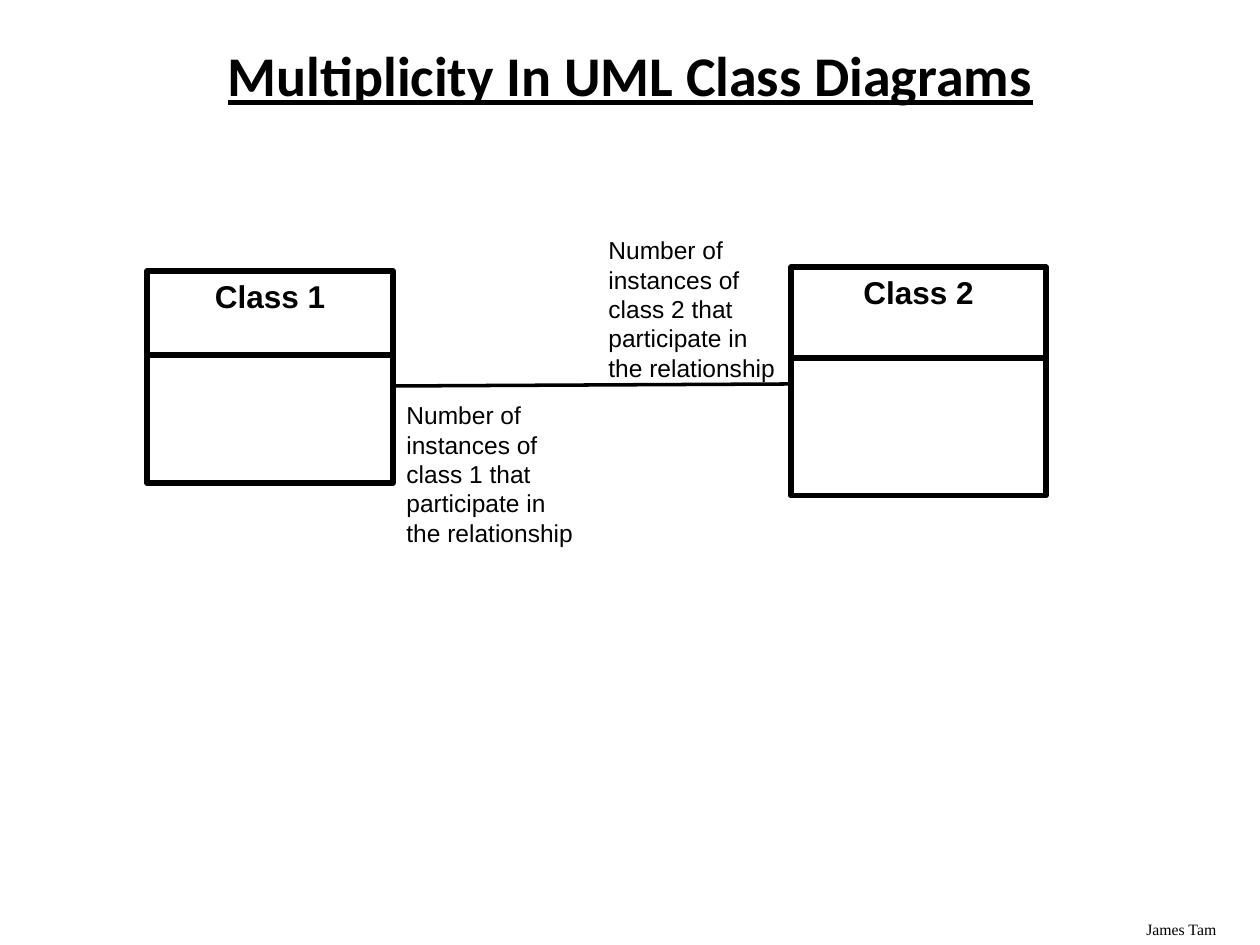
from dataclasses import dataclass

from lxml import etree
from pptx import Presentation, util as u
from pptx.dml.color import RGBColor
from pptx.enum import shapes, text
from pptx.oxml.ns import qn

# Content: boxes are (left, top, width, height) in px
TITLE = ("Multiplicity In UML Class Diagrams", (95, 0, 1071, 157))
AUTHOR = ("James Tam", (1134, 914, 126, 31))
CLASSES = [  # name, box, height of the name compartment
    ("Class 1", (147, 271, 246, 212), 84),
    ("Class 2", (791, 267, 255, 229), 91),
]
NOTES = [  # class number, box
    (1, (394, 394, 193, 159)),
    (2, (596, 229, 193, 161)),
]
NOTE_TEXT = "Number of instances of class {} that participate in the relationship"
ASSOCIATION = (393, 386, 791, 384)
NAME_HEIGHT = 50


@dataclass(frozen=True)
class Theme:
    ink: RGBColor = RGBColor(0, 0, 0)
    title_font: str = "Calibri"
    body_font: str = "Arial"
    author_font: str = "Times New Roman"
    title_size: int = 32
    name_size: int = 18
    note_size: int = 14
    author_size: int = 9
    class_line: int = 3
    association_line: int = 2


THEME = Theme()
PX = u.Inches(1) / 126


def emu(*lengths):
    return [round(length * PX) for length in lengths]


def add_text(parent, wording, box, font, size, bold=False, centred=False):
    text_box = parent.add_textbox(*emu(*box))
    frame = text_box.text_frame
    frame.text = wording
    frame.word_wrap = True
    paragraph = frame.paragraphs[0]
    paragraph.alignment = text.PP_ALIGN.CENTER if centred else text.PP_ALIGN.LEFT
    run_font = paragraph.runs[0].font
    run_font.name, run_font.size, run_font.bold = font, u.Pt(size), bold
    run_font.color.rgb = THEME.ink
    return text_box


def add_line(parent, ends, width):
    line = parent.add_connector(shapes.MSO_CONNECTOR.STRAIGHT, *emu(*ends))
    line.line.color.rgb = THEME.ink
    line.line.width = u.Pt(width)
    etree.SubElement(line._element.spPr, qn("a:effectLst"))


def add_class(slide, name, box, name_part):
    left, top, width, height = box
    parts = slide.shapes.add_group_shape().shapes
    outline = parts.add_shape(shapes.MSO_SHAPE.RECTANGLE, *emu(*box))
    outline.shadow.inherit = False
    outline.fill.background()
    outline.line.color.rgb = THEME.ink
    outline.line.width = u.Pt(THEME.class_line)
    add_text(parts, name, (left, top, width, NAME_HEIGHT), THEME.body_font,
             THEME.name_size, bold=True, centred=True)
    divider = top + name_part
    add_line(parts, (left, divider, left + width, divider), THEME.class_line)


def main():
    presentation = Presentation()
    presentation.slide_width, presentation.slide_height = emu(1260, 945)
    slide = presentation.slides.add_slide(presentation.slide_layouts[6])

    # Title and author
    add_text(slide.shapes, *AUTHOR, THEME.author_font, THEME.author_size)
    title = add_text(slide.shapes, *TITLE, THEME.title_font, THEME.title_size,
                     bold=True, centred=True)
    title.text_frame.vertical_anchor = text.MSO_ANCHOR.MIDDLE
    heading = title.text_frame.paragraphs[0]
    heading.line_spacing = 0.9
    heading.runs[0].font.underline = True

    # Classes and the association between them
    for name, box, name_part in CLASSES:
        add_class(slide, name, box, name_part)
    add_line(slide.shapes, ASSOCIATION, THEME.association_line)

    # Multiplicity notes
    for number, box in NOTES:
        add_text(slide.shapes, NOTE_TEXT.format(number), box,
                 THEME.body_font, THEME.note_size)

    presentation.save("out.pptx")


if __name__ == "__main__":
    main()
